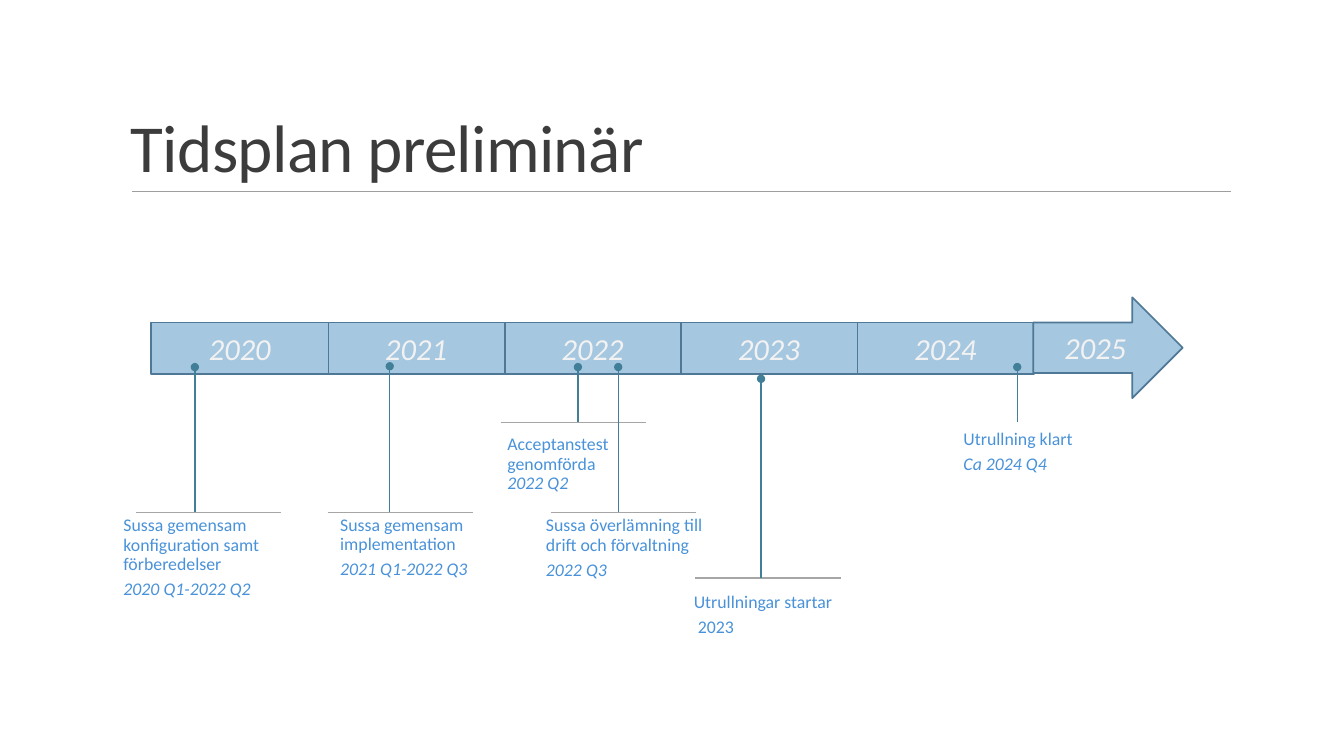
from dataclasses import dataclass

from lxml.etree import SubElement
from pptx import Presentation
from pptx.dml.color import RGBColor
from pptx.enum.shapes import MSO_CONNECTOR, MSO_SHAPE
from pptx.enum.text import MSO_ANCHOR, PP_ALIGN
from pptx.oxml.ns import qn
from pptx.util import Inches, Pt


@dataclass(frozen=True)
class Theme:
    font: str = "Calibri"
    title: str = "3C3C3C"
    rule: str = "9E9E9E"
    bar: str = "A6C7E0"
    bar_edge: str = "4E7896"
    year: str = "F2F2F2"
    label: str = "4992D9"
    shelf: str = "A6A6A6"
    pin: str = "407F97"
    title_size: float = 48
    year_size: float = 21.8
    label_size: float = 12.7


@dataclass(frozen=True)
class Milestone:
    pin: tuple
    box: tuple
    indent: float
    lines: tuple
    shelf: float | None = None
    anchor: MSO_ANCHOR = MSO_ANCHOR.TOP
    italic_date: bool = True
    gap: float = 4.4


class Timeline:
    COLUMNS, ROWS = 16, 9
    SHELF_WIDTH = 1.73

    def __init__(self, deck, theme):
        self.theme = theme
        self.column = deck.slide_width / self.COLUMNS
        self.row = deck.slide_height / self.ROWS
        self.shapes = deck.slides.add_slide(deck.slide_layouts[6]).shapes

    def x(self, columns):
        return round(columns * self.column)

    def y(self, rows):
        return round(rows * self.row)

    def place(self, left, top, width, height):
        return self.x(left), self.y(top), self.x(width), self.y(height)

    def style(self, paragraph, size, color, italic=False):
        font = paragraph.font
        font.name = self.theme.font
        font.size = Pt(size)
        font.italic = italic
        font.color.rgb = RGBColor.from_string(color)

    def title(self, wording, box):
        frame = self.shapes.add_textbox(*self.place(*box)).text_frame
        frame.word_wrap = True
        frame.vertical_anchor = MSO_ANCHOR.BOTTOM
        heading = frame.paragraphs[0]
        heading.text = wording
        heading.line_spacing = 0.85
        self.style(heading, self.theme.title_size, self.theme.title)
        heading.runs[0].font._element.set("spc", "-50")

    def line(self, start, end, color, width=1, dotted_start=False):
        stroke = self.shapes.add_connector(
            MSO_CONNECTOR.STRAIGHT,
            self.x(start[0]), self.y(start[1]), self.x(end[0]), self.y(end[1]))
        stroke.line.width = Pt(width)
        stroke.line.color.rgb = RGBColor.from_string(color)
        properties = stroke._element.spPr
        if dotted_start:
            SubElement(properties.find(qn("a:ln")), qn("a:headEnd"), type="oval")
        SubElement(properties, qn("a:effectLst"))

    def year(self, wording, box, preset=MSO_SHAPE.RECTANGLE):
        bar = self.shapes.add_shape(preset, *self.place(*box))
        bar.shadow.inherit = False
        bar.fill.solid()
        bar.fill.fore_color.rgb = RGBColor.from_string(self.theme.bar)
        bar.line.color.rgb = RGBColor.from_string(self.theme.bar_edge)
        bar.line.width = Pt(1.25)
        bar.text_frame.vertical_anchor = MSO_ANCHOR.MIDDLE
        caption = bar.text_frame.paragraphs[0]
        caption.text = wording
        caption.alignment = PP_ALIGN.CENTER
        self.style(caption, self.theme.year_size, self.theme.year, italic=True)

    def label(self, milestone):
        frame = self.shapes.add_textbox(*self.place(*milestone.box)).text_frame
        frame.word_wrap = True
        frame.vertical_anchor = milestone.anchor
        frame.margin_left = self.x(milestone.indent)
        frame.margin_right = frame.margin_top = self.y(0.1)
        frame.margin_bottom = self.y(0.12)
        event, date = milestone.lines
        for wording, italic in ((event, False), (date, milestone.italic_date)):
            paragraph = frame.paragraphs[0] if wording is event else frame.add_paragraph()
            paragraph.text = wording
            paragraph.line_spacing = 0.9
            paragraph.space_after = Pt(milestone.gap)
            self.style(paragraph, self.theme.label_size, self.theme.label, italic)

    def milestone(self, milestone):
        x, top, bottom = milestone.pin
        self.label(milestone)
        if milestone.shelf is not None:
            self.line((milestone.shelf, bottom),
                      (milestone.shelf + self.SHELF_WIDTH, bottom), self.theme.shelf)
        self.line((x, top), (x, bottom), self.theme.pin, dotted_start=True)


MILESTONES = (
    Milestone((2.32, 4.37, 6.1), (1.09, 6.05, 2.39, 1.19), 0.38,
              ("Sussa gemensam konfiguration samt förberedelser", "2020 Q1-2022 Q2"), 1.62),
    Milestone((4.64, 4.36, 6.1), (3.79, 6.04, 2, 0.95), 0.26,
              ("Sussa gemensam \vimplementation", "2021 Q1-2022 Q3"), 3.9),
    Milestone((6.88, 4.37, 5.03), (5.68, 4.75, 1.94, 1.24), 0.36,
              ("Acceptanstest\vgenomförda", "2022 Q2"), 5.96, MSO_ANCHOR.BOTTOM, gap=0),
    Milestone((7.36, 4.37, 6.1), (6.36, 6.05, 2.15, 0.9), 0.14,
              ("Sussa överlämning till drift och förvaltning", "2022 Q3"), 6.56),
    Milestone((9.06, 4.51, 6.88), (8.12, 6.82, 1.99, 0.89), 0.14,
              ("Utrullningar startar", " 2023"), 8.28, MSO_ANCHOR.BOTTOM, italic_date=False),
    Milestone((12.11, 4.37, 5.03), (11.28, 5.02, 1.7, 0.97), 0.19,
              ("Utrullning klart", "Ca 2024 Q4")),
)


def main():
    deck = Presentation()
    deck.slide_width, deck.slide_height = Inches(13.33), Inches(7.5)
    theme = Theme()
    timeline = Timeline(deck, theme)
    timeline.line((1.57, 2.28), (14.65, 2.28), theme.rule, 0.5)
    timeline.title("Tidsplan preliminär", (1.44, 0.37, 13.2, 1.91))
    for position in reversed(range(5)):
        timeline.year(str(2020 + position), (1.8 + 2.1 * position, 3.84, 2.11, 0.61))
    timeline.year("2025", (12.3, 3.54, 1.78, 1.2), MSO_SHAPE.RIGHT_ARROW)
    for milestone in MILESTONES:
        timeline.milestone(milestone)
    deck.save("out.pptx")


if __name__ == "__main__":
    main()
